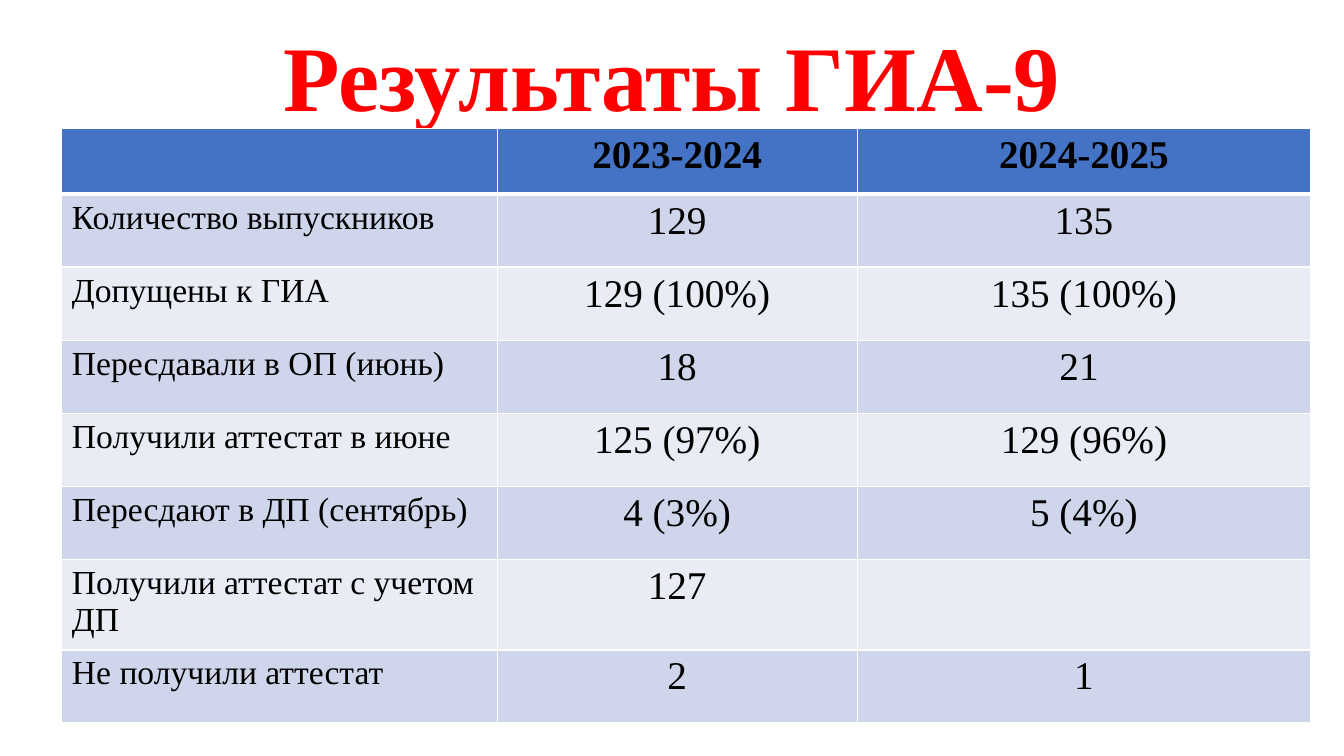
from dataclasses import dataclass

from lxml import etree
from pptx import Presentation
from pptx import util as u
from pptx.dml.color import RGBColor
from pptx.enum import text
from pptx.oxml import ns

FONT = "Times New Roman"
COLORS = {
    "title": "FF0000",
    "ink": "000000",
    "header": "4472C4",
    "odd": "CFD5EA",
    "even": "E9EBF5",
    "border": "FFFFFF",
}
COLUMN_WIDTHS = (10.97, 9.07, 11.43)
HEADER_HEIGHT, ROW_HEIGHT = 1.65, 1.84
THIN, THICK = 1, 3


@dataclass
class Result:
    label: str
    previous: str
    current: str


RESULTS = (
    Result("Количество выпускников", "129", "135"),
    Result("Допущены к ГИА", "129 (100%)", "135 (100%)"),
    Result("Пересдавали в ОП (июнь)", "18", "21 "),
    Result("Получили аттестат в июне", "125 (97%)", "129 (96%)"),
    Result("Пересдают в ДП (сентябрь)", "4 (3%)", "5 (4%)"),
    Result("Получили аттестат с учетом ДП", "127", ""),
    Result("Не получили аттестат", "2", "1"),
)


def add_span(para, words: str, size: int, color: str, bold: bool) -> None:
    span = para.add_run()
    span.text = words
    span.font.name = FONT
    span.font.size = u.Pt(size)
    span.font.bold = bold
    span.font.color.rgb = RGBColor.from_string(COLORS[color])


def add_borders(cell, top: int, bottom: int) -> None:
    properties = cell._tc.get_or_add_tcPr()
    for side, width in (("L", THIN), ("R", THIN), ("T", top), ("B", bottom)):
        line = etree.SubElement(properties, ns.qn(f"a:ln{side}"), w=str(u.Pt(width)))
        fill = etree.SubElement(line, ns.qn("a:solidFill"))
        etree.SubElement(fill, ns.qn("a:srgbClr"), val=COLORS["border"])


def fill_cell(cell, words: str, row: int, column: int) -> None:
    is_header = row == 0
    add_borders(cell, THICK if row == 1 else THIN, THICK if is_header else THIN)
    band = "header" if is_header else "odd" if row % 2 else "even"
    cell.fill.solid()
    cell.fill.fore_color.rgb = RGBColor.from_string(COLORS[band])
    if words:
        para = cell.text_frame.paragraphs[0]
        para.alignment = text.PP_ALIGN.CENTER if column else text.PP_ALIGN.LEFT
        add_span(para, words, 28 if column else 24, "ink", is_header)


def add_title(page, words: str) -> None:
    box = page.shapes.add_textbox(u.Cm(2.33), u.Cm(0.25), u.Cm(29.21), u.Cm(3.6))
    frame = box.text_frame
    frame.word_wrap = True
    frame.vertical_anchor = text.MSO_ANCHOR.MIDDLE
    para = frame.paragraphs[0]
    para.alignment = text.PP_ALIGN.CENTER
    para.line_spacing = 0.9
    add_span(para, words, 66, "title", True)


def add_results(page, results: tuple[Result, ...]) -> None:
    rows = [("", "2023-2024", "2024-2025")]
    rows += [(result.label, result.previous, result.current) for result in results]
    heights = [HEADER_HEIGHT] + [ROW_HEIGHT] * len(results)
    table = page.shapes.add_table(
        len(rows), len(COLUMN_WIDTHS), u.Cm(1.56), u.Cm(3.24),
        u.Cm(sum(COLUMN_WIDTHS)), u.Cm(sum(heights)),
    ).table
    for column, width in zip(table.columns, COLUMN_WIDTHS):
        column.width = u.Cm(width)
    for row, height in zip(table.rows, heights):
        row.height = u.Cm(height)
    for row, values in enumerate(rows):
        for column, words in enumerate(values):
            fill_cell(table.cell(row, column), words, row, column)


def main() -> None:
    deck = Presentation()
    deck.slide_width, deck.slide_height = u.Cm(33.87), u.Cm(19.05)
    page = deck.slides.add_slide(deck.slide_layouts[6])

    # Title, partly covered by the table
    add_title(page, "Результаты ГИА-9")

    # Exam results by school year
    add_results(page, RESULTS)

    deck.save("out.pptx")


if __name__ == "__main__":
    main()
